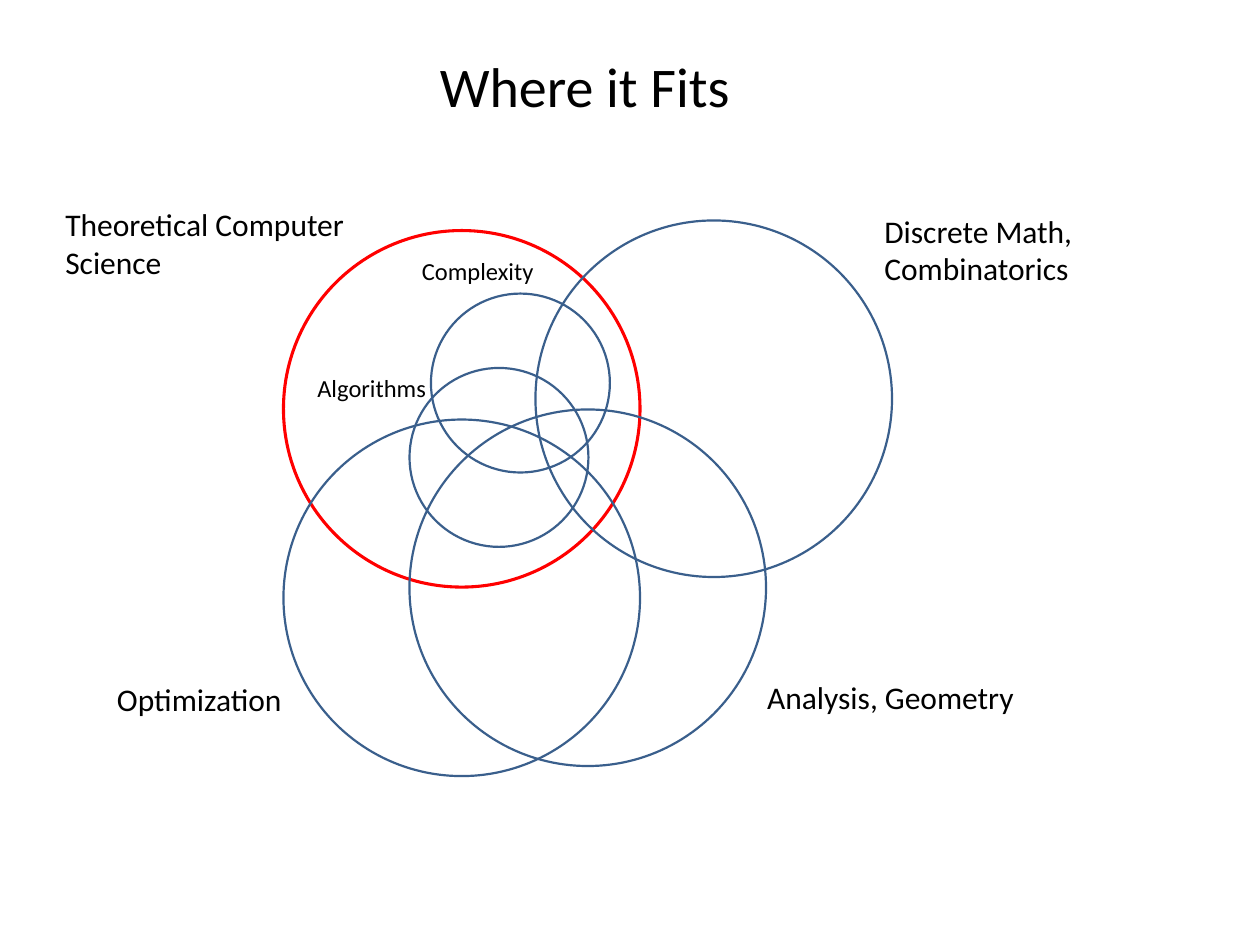
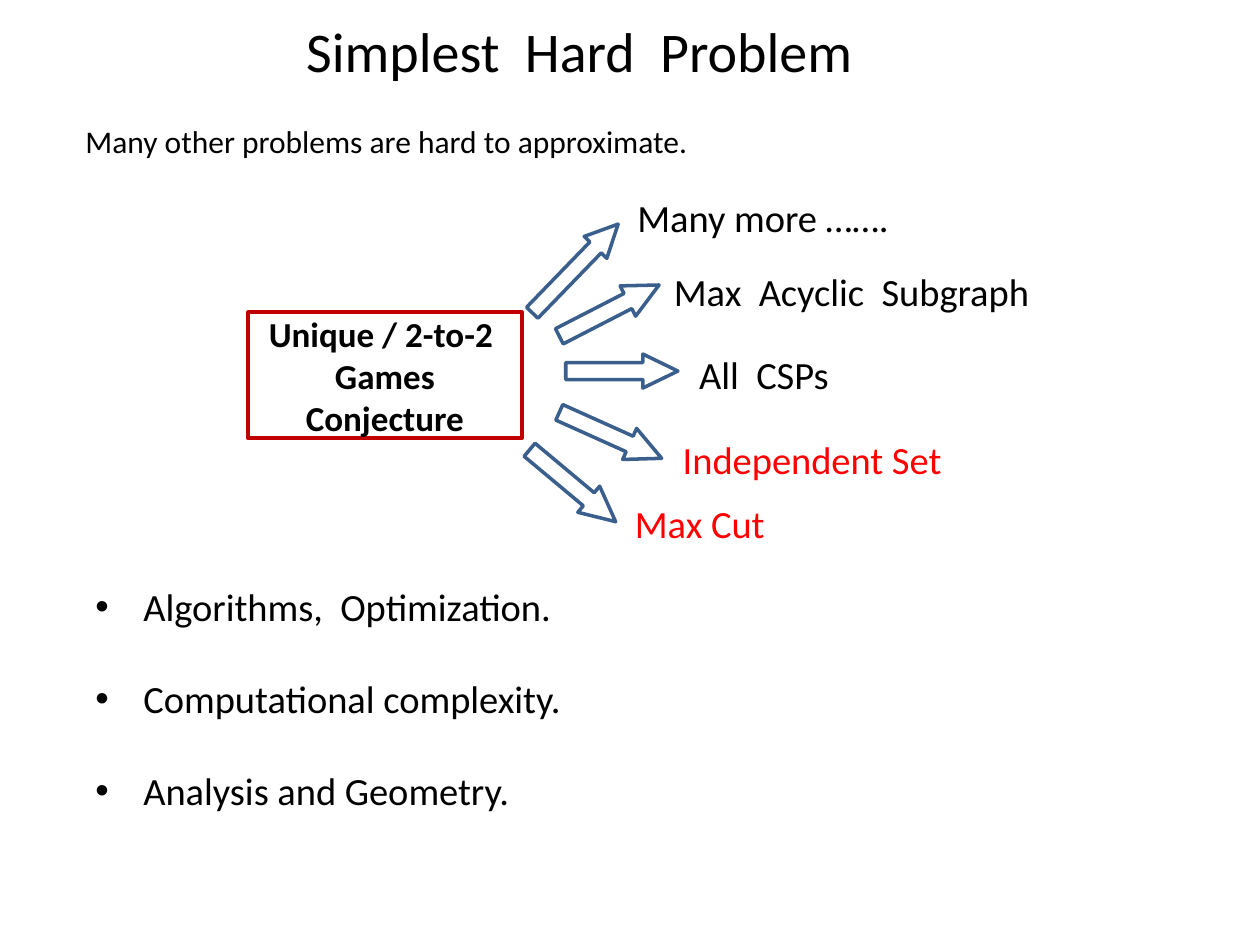
from lxml import etree
from pptx import Presentation
from pptx.dml.color import RGBColor
from pptx.enum import shapes, text
from pptx.oxml import ns
from pptx.util import Inches, Pt

COLORS = {"ink": "000000", "red": "FF0000", "blue": "3A5F8C", "box": "C00000"}
FONT = "Calibri"
TITLE_ONLY = 5


class Deck:
    """Holds the shared style and the current slide."""

    def __init__(self):
        self.presentation = Presentation()
        self.presentation.slide_width = Inches(10)
        self.presentation.slide_height = Inches(7.5)
        self.slide = None

    def add_text(self, paragraph, words, size, color="ink", bold=False):
        run = paragraph.add_run()
        run.text = words
        run.font.name = FONT
        run.font.size = Pt(size)
        run.font.bold = bold
        run.font.color.rgb = RGBColor.from_string(COLORS[color])

    def fill_frame(self, frame, lines, size, color="ink"):
        frame.word_wrap = False
        frame.auto_size = text.MSO_AUTO_SIZE.NONE
        frame.vertical_anchor = text.MSO_ANCHOR.TOP
        for index, line in enumerate(lines):
            paragraph = frame.add_paragraph() if index else frame.paragraphs[0]
            paragraph.alignment = text.PP_ALIGN.LEFT
            self.add_text(paragraph, line, size, color)

    def add_slide(self, title, left, top, width):
        layout = self.presentation.slide_layouts[TITLE_ONLY]
        self.slide = self.presentation.slides.add_slide(layout)
        shape = self.slide.shapes.title
        shape.left, shape.top = Inches(left), Inches(top)
        shape.width, shape.height = Inches(width), Inches(0.64)
        self.fill_frame(shape.text_frame, [title], 32)

    def label(self, lines, left, top, width, height, size=18, color="ink"):
        shape = self.slide.shapes.add_textbox(
            Inches(left), Inches(top), Inches(width), Inches(height))
        self.fill_frame(shape.text_frame, lines, size, color)
        return shape

    def bullets(self, lines, left, top, width, height, size, gap):
        shape = self.label(lines, left, top, width, height, size)
        for index, paragraph in enumerate(shape.text_frame.paragraphs):
            paragraph.space_before = Pt(gap if index else 0)
            properties = paragraph._p.get_or_add_pPr()
            properties.set("marL", str(Inches(0.38)))
            properties.set("indent", str(-Inches(0.38)))
            font = etree.SubElement(properties, ns.qn("a:buFont"))
            font.set("typeface", "Arial")
            etree.SubElement(properties, ns.qn("a:buChar")).set("char", "•")

    def outline(self, kind, left, top, width, height, color, weight):
        shape = self.slide.shapes.add_shape(
            kind, Inches(left), Inches(top), Inches(width), Inches(height))
        shape.shadow.inherit = False
        shape.fill.background()
        shape.line.color.rgb = RGBColor.from_string(COLORS[color])
        shape.line.width = Pt(weight)
        return shape

    def circle(self, left, top, diameter, color="blue", weight=1.25):
        self.outline(shapes.MSO_SHAPE.OVAL, left, top, diameter, diameter,
                     color, weight)

    def arrow(self, left, top, width, height, rotation):
        shape = self.outline(shapes.MSO_SHAPE.DOWN_ARROW, left, top, width,
                             height, "blue", 2)
        shape.adjustments[0] = 0.5
        shape.adjustments[1] = 1.03
        shape.rotation = rotation

    def box(self, words, left, top, width, height):
        shape = self.outline(shapes.MSO_SHAPE.RECTANGLE, left, top, width,
                             height, "box", 2.25)
        frame = shape.text_frame
        frame.word_wrap = True
        frame.vertical_anchor = text.MSO_ANCHOR.MIDDLE
        frame.paragraphs[0].alignment = text.PP_ALIGN.CENTER
        self.add_text(frame.paragraphs[0], words, 20, bold=True)


def add_fields_slide(deck):
    deck.add_slide("Where it Fits", 3.39, 0.36, 2.53)

    # Fields as large circles, with two areas of theory inside the red one
    field, area = 2.83, 1.42
    deck.circle(2.25, 1.83, field, "red", 1.75)
    for left, top, diameter in [(4.25, 1.75, field), (3.25, 3.25, field),
                                (3.42, 2.33, area), (3.25, 2.92, area),
                                (2.25, 3.33, field)]:
        deck.circle(left, top, diameter)

    # Names of the fields and areas
    deck.label(["Theoretical Computer", "Science"], 0.42, 1.58, 2.5, 0.71)
    deck.label(["Discrete Math,", "Combinatorics"], 6.92, 1.63, 1.71, 0.71)
    deck.label(["Analysis, Geometry"], 5.99, 5.33, 2.18, 0.4)
    deck.label(["Optimization"], 0.83, 5.35, 1.52, 0.4)
    deck.label(["Algorithms"], 2.42, 2.91, 1.07, 0.34, 14)
    deck.label(["Complexity"], 3.25, 1.98, 1.1, 0.34, 14)


def add_problem_slide(deck):
    deck.add_slide("Simplest  Hard  Problem", 2.33, 0.08, 4.58)
    deck.label(["Many other problems are hard to approximate."],
               0.58, 0.92, 5.03, 0.4)

    # Conjecture and the problems it reaches
    deck.box("Unique / 2-to-2  Games Conjecture", 1.97, 2.48, 2.17, 1)
    problems = [
        ("Many more …….", "ink", (4.96, 1.49, 2.29),
         (4.44, 1.64, 0.25, 0.98, 224.1)),
        ("Max  Acyclic  Subgraph", "ink", (5.25, 2.08, 3.12),
         (4.7, 2.02, 0.27, 0.89, 242.8)),
        ("All  CSPs", "ink", (5.45, 2.74, 1.38),
         (4.8, 2.5, 0.27, 0.89, 270)),
        ("Independent Set", "red", (5.32, 3.41, 2.28),
         (4.71, 3.01, 0.27, 0.89, 294.2)),
        ("Max Cut", "red", (4.94, 3.92, 1.31),
         (4.41, 3.41, 0.27, 0.89, 309.9)),
    ]
    for name, color, place, arrow in problems:
        deck.arrow(*arrow)
        deck.label([name], *place, 0.84, 22, color)

    # Related areas
    deck.bullets(["Algorithms,  Optimization.", "Computational complexity.",
                  "Analysis and Geometry."], 0.66, 4.58, 4.07, 1.95, 22, 26)


def main():
    deck = Deck()
    add_fields_slide(deck)
    add_problem_slide(deck)
    deck.presentation.save("out.pptx")


if __name__ == "__main__":
    main()
